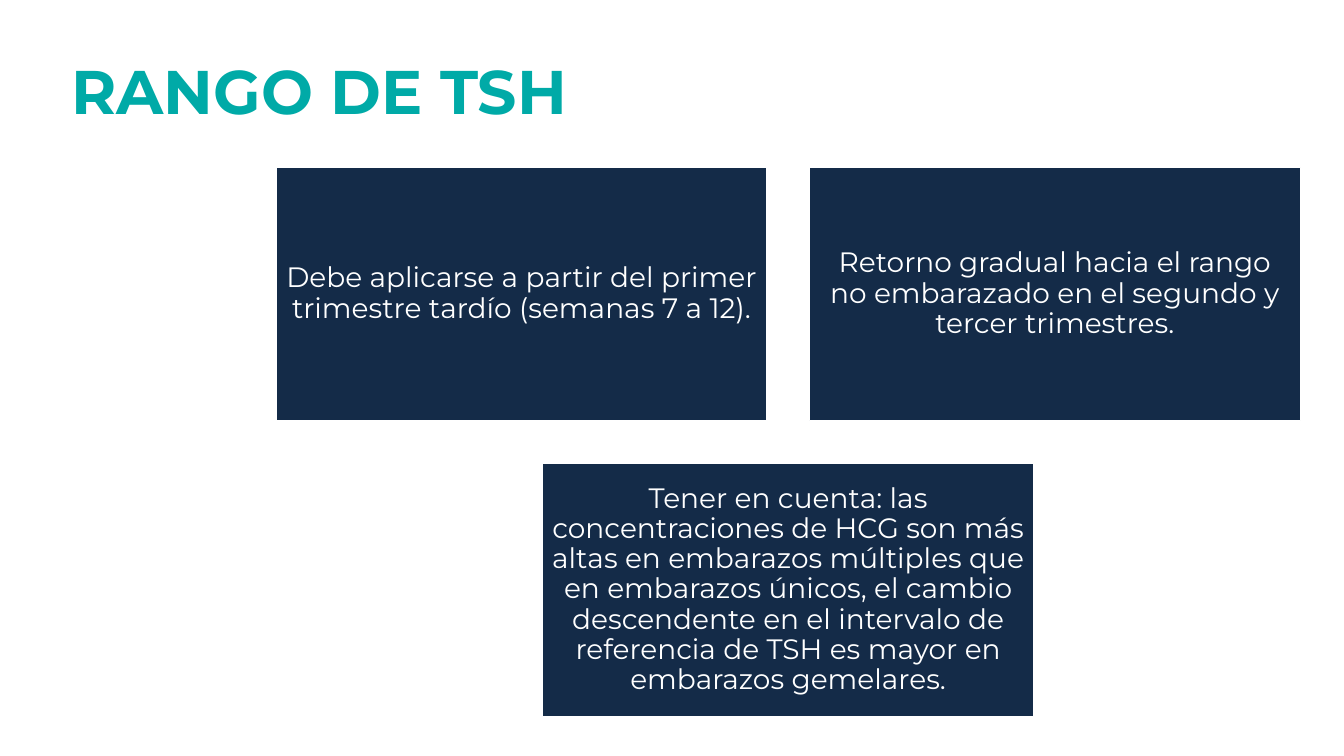
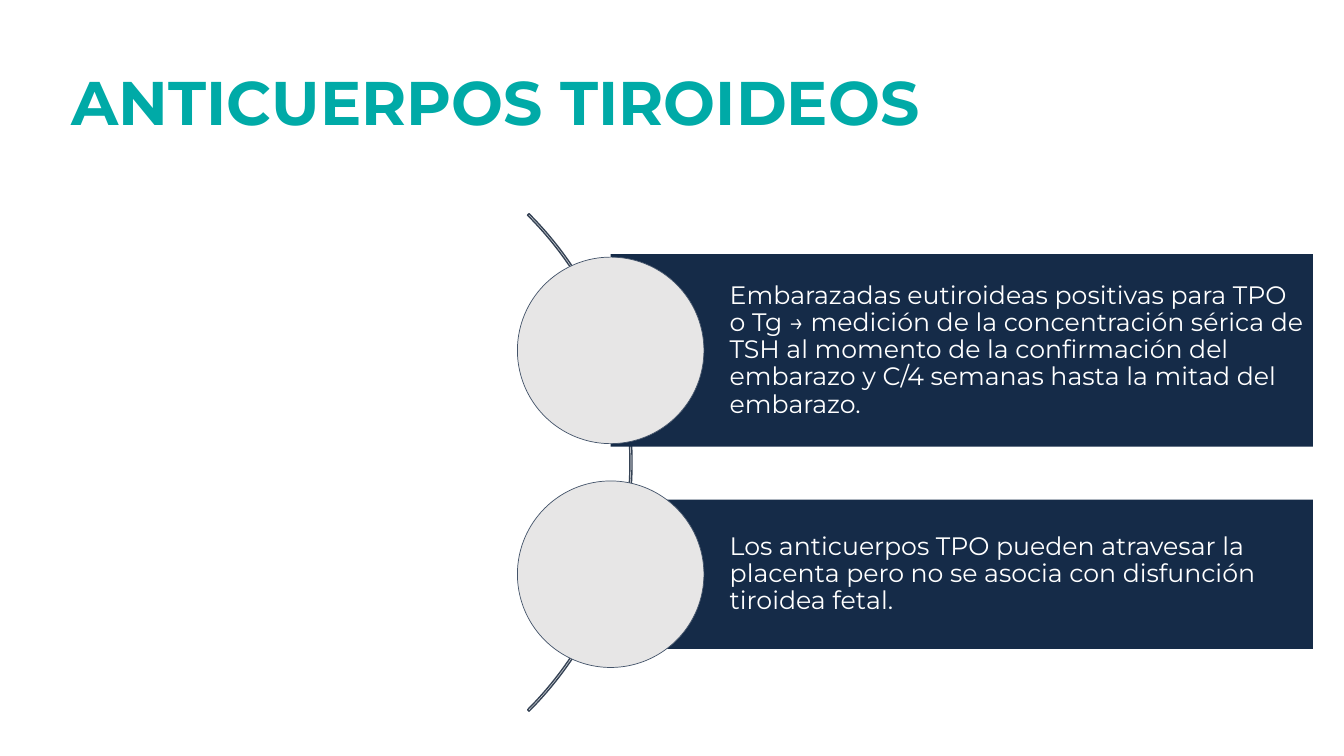
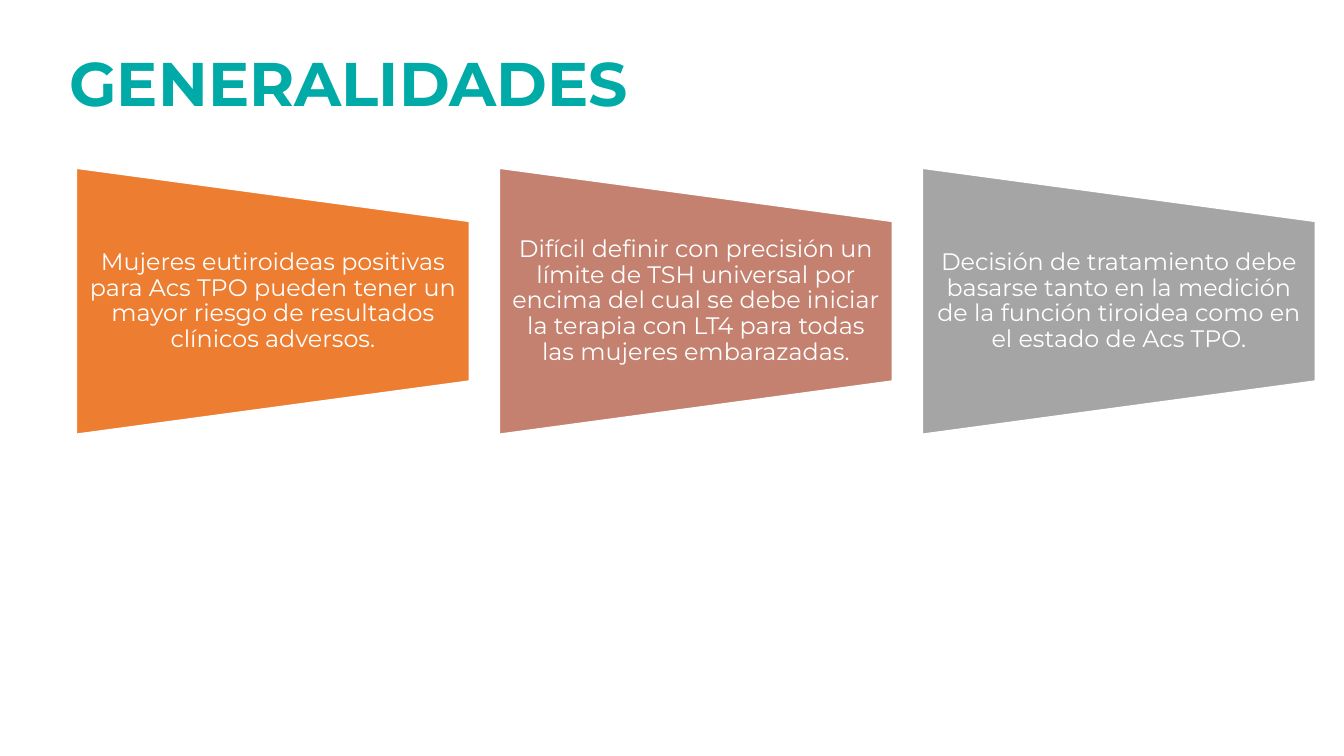
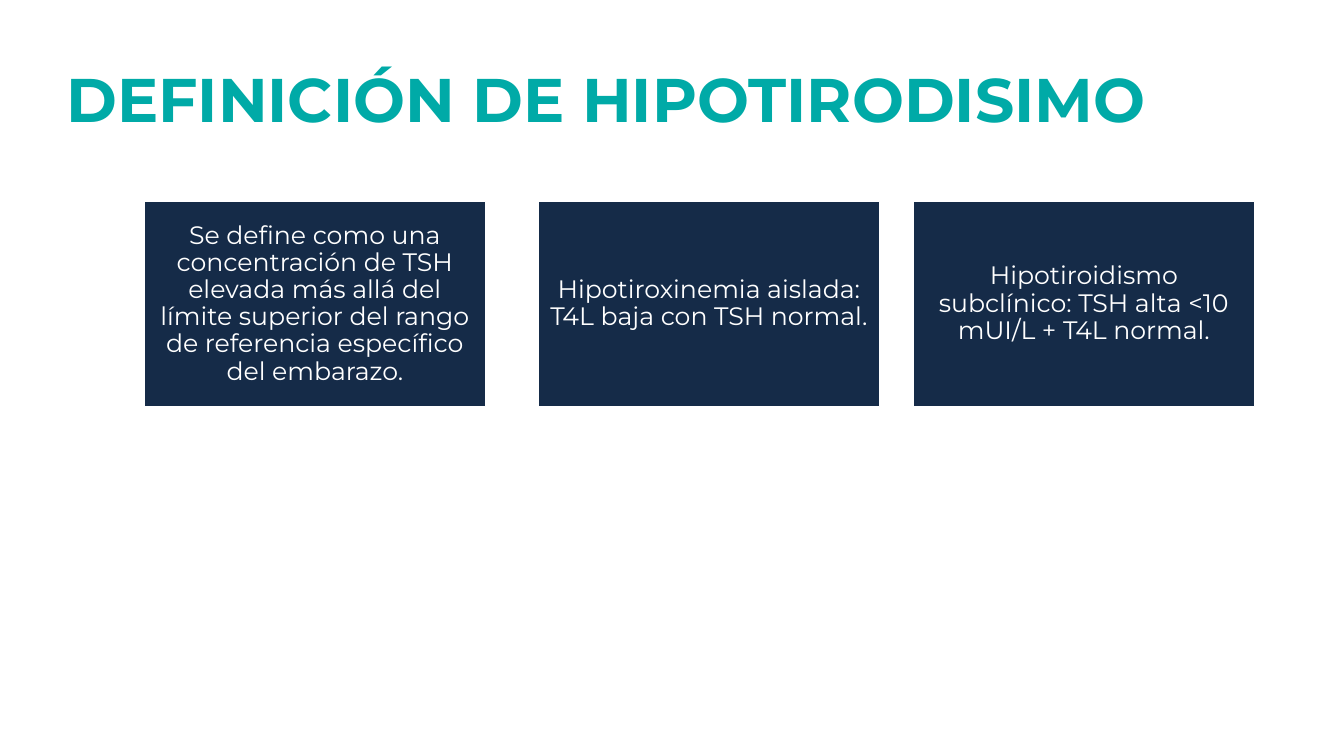
from pptx import Presentation
from pptx.dml.color import RGBColor
from pptx.enum.shapes import MSO_SHAPE
from pptx.enum.text import MSO_ANCHOR, MSO_AUTO_SIZE, PP_ALIGN
from pptx.util import Cm, Pt

# Shared style
FONT = "Montserrat"
TEAL, WHITE = "00AAA7", "FFFFFF"
NAVY, NAVY_DARK = "152B48", "142B48"
TITLE_SIZE = (29.21, 3.68)

# Content
RANGE_TITLE = "RANGO DE TSH"
RANGE_BOXES = [  # column, row, text
    (0, 0, "Debe aplicarse a partir del primer trimestre tardío (semanas 7 a 12)."),
    (1, 0, "Retorno gradual hacia el rango no embarazado en el segundo y tercer "
           "trimestres."),
    (0.5, 1, "Tener en cuenta: las concentraciones de HCG son más altas en embarazos "
             "múltiples que en embarazos únicos, el cambio descendente en el intervalo "
             "de referencia de TSH es mayor en embarazos gemelares."),
]
ANTIBODY_TITLE = "ANTICUERPOS TIROIDEOS"
ANTIBODY_BARS = [  # centre, height, text
    (8.83, 4.85, "Embarazadas eutiroideas positivas para TPO o Tg → medición de la "
                 "concentración sérica de TSH al momento de la confirmación del "
                 "embarazo y C/4 semanas hasta la mitad del embarazo."),
    (14.47, 3.76, "Los anticuerpos TPO pueden atravesar la placenta pero no se asocia "
                  "con disfunción tiroidea fetal."),
]
GENERAL_TITLE = "GENERALIDADES"
GENERAL_POINTS = [  # fill, text
    ("ED7D31", "Mujeres eutiroideas positivas para Acs TPO pueden tener un mayor riesgo "
               "de resultados clínicos adversos."),
    ("C48170", "Difícil definir con precisión un límite de TSH universal por encima del "
               "cual se debe iniciar la terapia con LT4 para todas las mujeres "
               "embarazadas."),
    ("A5A5A5", "Decisión de tratamiento debe basarse tanto en la medición de la función "
               "tiroidea como en el estado de Acs TPO."),
]
DEFINITION_TITLE = "DEFINICIÓN DE HIPOTIRODISIMO"
DEFINITIONS = [  # left, text
    (3.63, "Se define como una concentración de TSH elevada más allá del límite superior "
           "del rango de referencia específico del embarazo."),
    (13.56, "Hipotiroxinemia aislada: T4L baja con TSH normal."),
    (23.01, "Hipotiroidismo subclínico: TSH alta <10 mUI/L + T4L normal."),
]


def rgb(value):
    return RGBColor.from_string(value)


def write(sp, text, size, color=WHITE, bold=False, align=PP_ALIGN.CENTER,
          ins=(0.25, 0.13, 0.25, 0.13)):
    """Fill a shape's text frame; ins is left, top, right, bottom."""
    tf = sp.text_frame
    frame = {"word_wrap": True, "auto_size": MSO_AUTO_SIZE.NONE,
             "vertical_anchor": MSO_ANCHOR.MIDDLE}
    for side, gap in zip(("left", "top", "right", "bottom"), ins):
        frame["margin_" + side] = Cm(gap)
    for name, value in frame.items():
        setattr(tf, name, value)
    p = tf.paragraphs[0]
    p.alignment, p.line_spacing = align, 0.9
    r = p.add_run()
    r.text = text
    for name, value in {"name": FONT, "size": Pt(size), "bold": bold}.items():
        setattr(r.font, name, value)
    r.font.color.rgb = rgb(color)


def add_shape(s, kind, box, fill=None, line=None, width=1):
    sp = s.shapes.add_shape(kind, *map(Cm, box))
    sp.shadow.inherit = False
    if fill:
        sp.fill.solid()
        sp.fill.fore_color.rgb = rgb(fill)
    else:
        sp.fill.background()
    if line:
        sp.line.color.rgb = rgb(line)
        sp.line.width = Pt(width)
    else:
        sp.line.fill.background()
    return sp


def add_slide(prs, title, left, top):
    s = prs.slides.add_slide(prs.slide_layouts[5])
    sp = s.shapes.title
    box = (left, top, *TITLE_SIZE)
    for name, value in zip(("left", "top", "width", "height"), box):
        setattr(sp, name, Cm(value))
    write(sp, title, 44, TEAL, True, PP_ALIGN.LEFT)
    return s


def range_slide(prs):
    s = add_slide(prs, RANGE_TITLE, 1.55, 0.53)
    w, h, gap = 12.37, 6.38, 1.07
    for col, row, text in RANGE_BOXES:
        box = (6.96 + col * (w + gap), 4.22 + row * (h + gap), w, h)
        sp = add_shape(s, MSO_SHAPE.RECTANGLE, box, NAVY_DARK, WHITE)
        write(sp, text, 20, ins=(0.2,) * 4)


def antibody_slide(prs):
    s = add_slide(prs, ANTIBODY_TITLE, 1.55, 0.81)
    arc = add_shape(s, MSO_SHAPE.BLOCK_ARC, (-1.8, 2.79, 17.73, 17.73), line="364355")
    for i, value in enumerate((189, 27, 0.003)):
        arc.adjustments[i] = value
    bar_left, d = 15.39, 4.7
    for mid, h, text in ANTIBODY_BARS:
        bar = add_shape(s, MSO_SHAPE.RECTANGLE, (bar_left, mid - h / 2, 17.7, h), NAVY)
        write(bar, text, 18, align=PP_ALIGN.LEFT, ins=(3, 0.13, 0.13, 0.13))
        add_shape(s, MSO_SHAPE.OVAL, (bar_left - d / 2, mid - d / 2, d, d),
                  "E7E6E6", "44546A", 0.5)


def general_slide(prs):
    s = add_slide(prs, GENERAL_TITLE, 1.5, 0.33)
    length, side, text_h, mid = 9.9, 6.7, 4.01, 7.59
    for i, (fill, text) in enumerate(GENERAL_POINTS):
        left = 1.93 + i * 10.66
        # The shape is turned a quarter, so its width and height swap
        box = (left + (length - side) / 2, mid - length / 2, side, length)
        sp = add_shape(s, MSO_SHAPE.FLOWCHART_MANUAL_OPERATION, box, fill, WHITE)
        sp.rotation = 270
        label = s.shapes.add_textbox(*map(Cm, (left, mid - text_h / 2, length, text_h)))
        write(label, text, 17, ins=(0.3, 0, 0.3, 0))


def definition_slide(prs):
    s = add_slide(prs, DEFINITION_TITLE, 1.42, 0.74)
    for left, text in DEFINITIONS:
        sp = add_shape(s, MSO_SHAPE.RECTANGLE, (left, 5.08, 8.61, 5.16), NAVY, WHITE)
        write(sp, text, 18, ins=(0.18,) * 4)


def main():
    prs = Presentation()
    prs.slide_width, prs.slide_height = Cm(33.87), Cm(19.05)
    for build in (range_slide, antibody_slide, general_slide, definition_slide):
        build(prs)
    prs.save("out.pptx")


if __name__ == "__main__":
    main()
